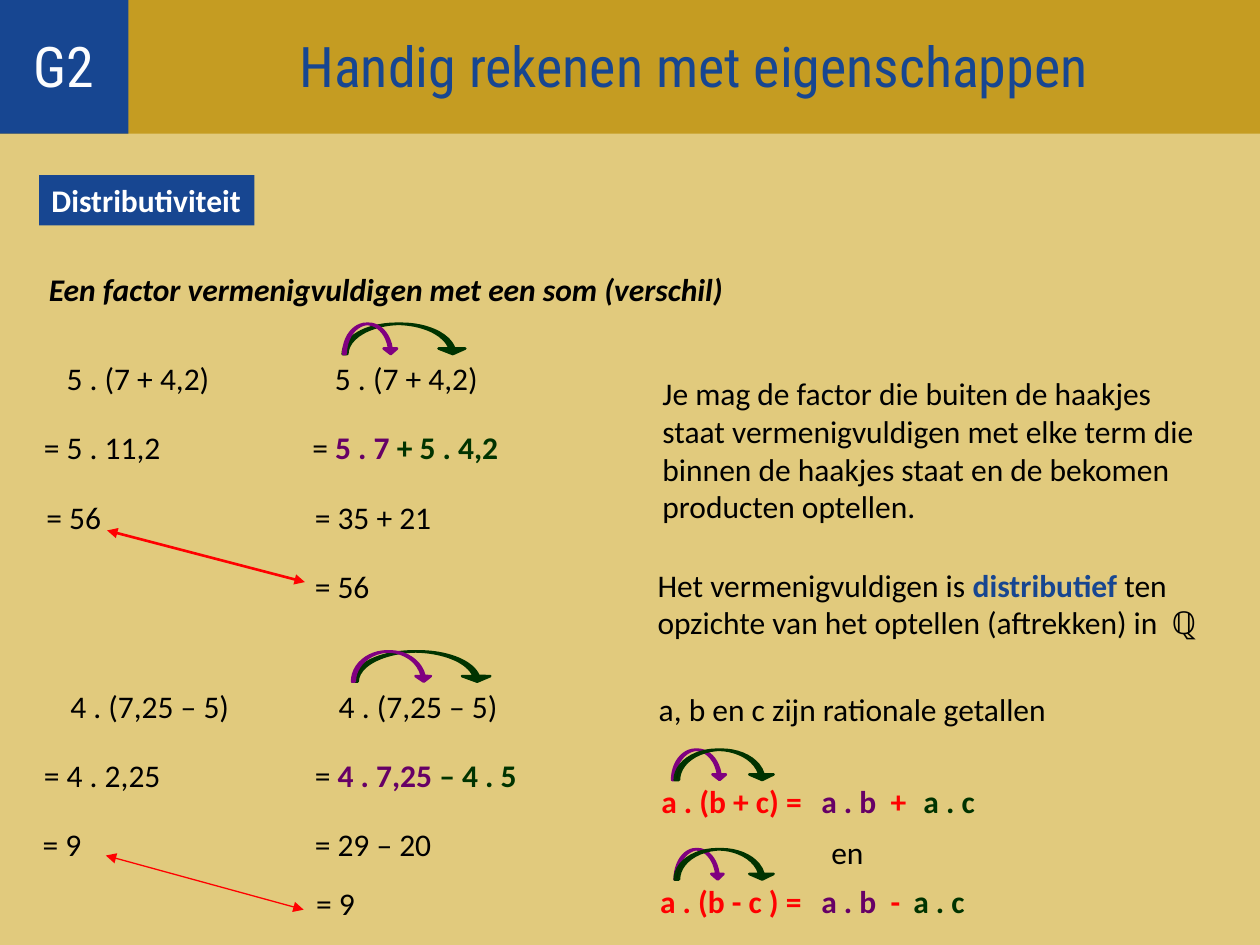
"""Build the lesson slide on the distributive property."""
from dataclasses import dataclass

from lxml import etree
from pptx import Presentation
from pptx.dml.color import RGBColor
from pptx.enum import shapes, text
from pptx.oxml import ns
from pptx.util import Inches, Pt

SAND = RGBColor(0xE1, 0xCA, 0x7D)
GOLD = RGBColor(0xC5, 0x9C, 0x22)
BLUE = RGBColor(0x17, 0x46, 0x91)
OFF_WHITE = RGBColor(0xFC, 0xFD, 0xFE)
WHITE = RGBColor(0xFF, 0xFF, 0xFF)
BLACK = RGBColor(0, 0, 0)
RED = RGBColor(0xFF, 0, 0)
PLUM = RGBColor(0x66, 0, 0x66)
PURPLE = RGBColor(0x80, 0, 0x80)
GREEN = RGBColor(0, 0x33, 0)
BODY_FONT, HEADING_FONT = "Calibri", "Roboto Condensed"
ROW_HEIGHT, ROW_PITCH = 0.4, 0.55
BANNER_TOP, BANNER_HEIGHT = -0.03, 1.09
ARC_HEIGHT = 0.24


@dataclass
class Span:
    words: str
    color: RGBColor = BLACK
    bold: bool = False
    italic: bool = False


@dataclass
class Passage:
    left: float
    top: float
    width: float
    paragraphs: list[list[Span]]
    height: float = ROW_HEIGHT
    wrap: bool = False


@dataclass
class Arc:
    center: float
    middle: float
    reach: float
    thickness: float
    color: RGBColor


@dataclass
class EqualityArrow:
    begin: tuple[float, float]
    end: tuple[float, float]
    weight: float


def write(frame, paragraphs: list[list[Span]], size: float = 18,
          font: str = BODY_FONT) -> None:
    for index, spans in enumerate(paragraphs):
        paragraph = frame.add_paragraph() if index else frame.paragraphs[0]
        for span in spans:
            run = paragraph.add_run()
            run.text = span.words
            run.font.name, run.font.size = font, Pt(size)
            run.font.bold, run.font.italic = span.bold, span.italic
            run.font.color.rgb = span.color


def draw_passage(slide, item: Passage) -> None:
    frame = slide.shapes.add_textbox(
        Inches(item.left), Inches(item.top),
        Inches(item.width), Inches(item.height)).text_frame
    frame.word_wrap = item.wrap
    frame.auto_size = text.MSO_AUTO_SIZE.SHAPE_TO_FIT_TEXT
    write(frame, item.paragraphs)


def draw_line(slide, left: float, top: float, width: float, *spans: Span) -> None:
    draw_passage(slide, Passage(left, top, width, [list(spans)]))


def draw_block(slide, left: float, top: float, width: float, height: float,
               color: RGBColor):
    block = slide.shapes.add_shape(
        shapes.MSO_SHAPE.RECTANGLE, Inches(left), Inches(top), Inches(width), Inches(height))
    block.shadow.inherit = False
    block.fill.solid()
    block.fill.fore_color.rgb = color
    block.line.fill.background()
    return block


def draw_arc(slide, arc: Arc) -> None:
    curve = slide.shapes.add_shape(
        shapes.MSO_SHAPE.CURVED_LEFT_ARROW,
        Inches(arc.center - ARC_HEIGHT / 2), Inches(arc.middle - arc.reach / 2),
        Inches(ARC_HEIGHT), Inches(arc.reach))
    curve.rotation = 270
    for index, value in enumerate((arc.thickness, arc.thickness * 5.77, 0.185)):
        curve.adjustments[index] = value
    curve.shadow.inherit = False
    curve.fill.solid()
    curve.fill.fore_color.rgb = arc.color
    curve.line.color.rgb = arc.color
    curve.line.width = Pt(1.5)


def draw_equality(slide, arrow: EqualityArrow) -> None:
    line = slide.shapes.add_connector(
        shapes.MSO_CONNECTOR.STRAIGHT, *map(Inches, arrow.begin + arrow.end))
    line.line.color.rgb = RED
    line.line.width = Pt(arrow.weight)
    outline = line.line._get_or_add_ln()
    for end in ("a:headEnd", "a:tailEnd"):
        etree.SubElement(outline, ns.qn(end), type="triangle")
    etree.SubElement(line._element.spPr, ns.qn("a:effectLst"))


def draw_banner(slide) -> None:
    title = slide.shapes.title
    title.left, title.top = Inches(0), Inches(BANNER_TOP)
    title.width, title.height = Inches(10), Inches(BANNER_HEIGHT)
    title.fill.solid()
    title.fill.fore_color.rgb = GOLD
    title.text_frame.margin_left = Inches(1.12)
    badge = draw_block(slide, 0, BANNER_TOP, 1.02, BANNER_HEIGHT, BLUE)
    for part, words, color in ((title, "Handig rekenen met eigenschappen", BLUE),
                               (badge, "G2", OFF_WHITE)):
        frame = part.text_frame
        frame.auto_size = text.MSO_AUTO_SIZE.NONE
        frame.vertical_anchor = text.MSO_ANCHOR.MIDDLE
        write(frame, [[Span(words, color)]], 32, HEADING_FONT)
        frame.paragraphs[0].alignment = text.PP_ALIGN.CENTER


def draw_section_label(slide) -> None:
    frame = draw_block(slide, 0.31, 1.39, 1.71, ROW_HEIGHT, BLUE).text_frame
    frame.word_wrap = False
    frame.vertical_anchor = text.MSO_ANCHOR.TOP
    write(frame, [[Span("Distributiviteit", WHITE, True)]])
    frame.paragraphs[0].alignment = text.PP_ALIGN.LEFT


def draw_examples(slide) -> None:
    sum_rows = [
        [(0.43, 1.34, [Span("5 . (7 + 4,2)")]), (2.56, 1.34, [Span("5 . (7 + 4,2)")])],
        [(0.25, 1.13, [Span("= 5 . 11,2")]),
         (2.38, 1.68, [Span("= "), Span("5 . 7 ", PLUM, True), Span("+ 5 . 4,2", GREEN, True)])],
        [(0.27, 0.64, [Span("= 56")]), (2.4, 1.13, [Span("= 35 + 21")])],
        [(2.4, 0.64, [Span("= 56")])],
    ]
    difference_rows = [
        [(0.46, 1.47, [Span("4 . (7,25 – 5)")]), (2.59, 1.47, [Span("4 . (7,25 – 5)")])],
        [(0.25, 1.13, [Span("= 4 . 2,25")]),
         (2.4, 1.81, [Span("= "), Span("4 . 7,25 ", PLUM, True), Span("– 4 . 5", GREEN, True)])],
        [(0.24, 0.51, [Span("= 9")]), (2.4, 1.13, [Span("= 29 – 20")])],
    ]
    for first_top, rows in ((2.8, sum_rows), (5.4, difference_rows)):
        for index, row in enumerate(rows):
            for left, width, spans in row:
                draw_line(slide, left, first_top + index * ROW_PITCH, width, *spans)
    draw_line(slide, 2.41, 6.97, 0.51, Span("= 9"))
    for arrow in (EqualityArrow((0.85, 4.21), (2.42, 4.62), 1.5),
                  EqualityArrow((0.84, 6.79), (2.41, 7.22), 0.75)):
        draw_equality(slide, arrow)
    for arc in (Arc(3.21, 2.69, 0.98, 0.153, GREEN), Arc(2.94, 2.69, 0.43, 0.077, PURPLE),
                Arc(3.35, 5.29, 1.1, 0.162, GREEN), Arc(3.11, 5.29, 0.63, 0.088, PURPLE)):
        draw_arc(slide, arc)


def draw_rules(slide) -> None:
    draw_passage(slide, Passage(5.16, 2.92, 4.57, [
        [Span("Je mag de factor die buiten de haakjes staat vermenigvuldigen met elke term "
              "die binnen de haakjes staat en de bekomen")],
        [Span("producten optellen.")]], 1.3, True))
    draw_passage(slide, Passage(5.12, 4.44, 4.88, [[
        Span("Het vermenigvuldigen is "), Span("distributief", BLUE, True),
        Span(" ten opzichte van het optellen (aftrekken) in")]], 0.7, True))
    draw_line(slide, 9.2, 4.74, 0.43, Span("ℚ", bold=True))
    draw_line(slide, 5.13, 5.43, 3.3, Span("a, b en c zijn rationale getallen"))
    draw_line(slide, 6.5, 6.56, 0.46, Span("en"))
    for top, left, product, sign, last_left, reach, thickness in (
            (6.16, 5.15, "a . (b + c) =", "+", 7.23, 0.43, 0.077),
            (6.95, 5.14, "a . (b - c ) =", "-", 7.15, 0.39, 0.07)):
        draw_line(slide, left, top, 1.33, Span(product, RED, True))
        draw_line(slide, 6.42, top, 0.64, Span("a . b", PLUM, True))
        draw_line(slide, 6.97, top, 0.3, Span(sign, RED, True))
        draw_line(slide, last_left, top, 0.61, Span("a . c", GREEN, True))
        draw_arc(slide, Arc(5.55, top - 0.09, reach, thickness, PURPLE))
        draw_arc(slide, Arc(5.75, top - 0.09, 0.79, 0.139, GREEN))


def main() -> None:
    deck = Presentation()
    deck.slide_width, deck.slide_height = Inches(10), Inches(7.5)
    slide = deck.slides.add_slide(deck.slide_layouts[5])
    slide.background.fill.solid()
    slide.background.fill.fore_color.rgb = SAND
    draw_banner(slide)
    draw_section_label(slide)
    draw_line(slide, 0.29, 2.09, 5.58,
              Span("Een factor vermenigvuldigen met een som (verschil)", bold=True, italic=True))
    draw_examples(slide)
    draw_rules(slide)
    deck.save("out.pptx")


if __name__ == "__main__":
    main()
